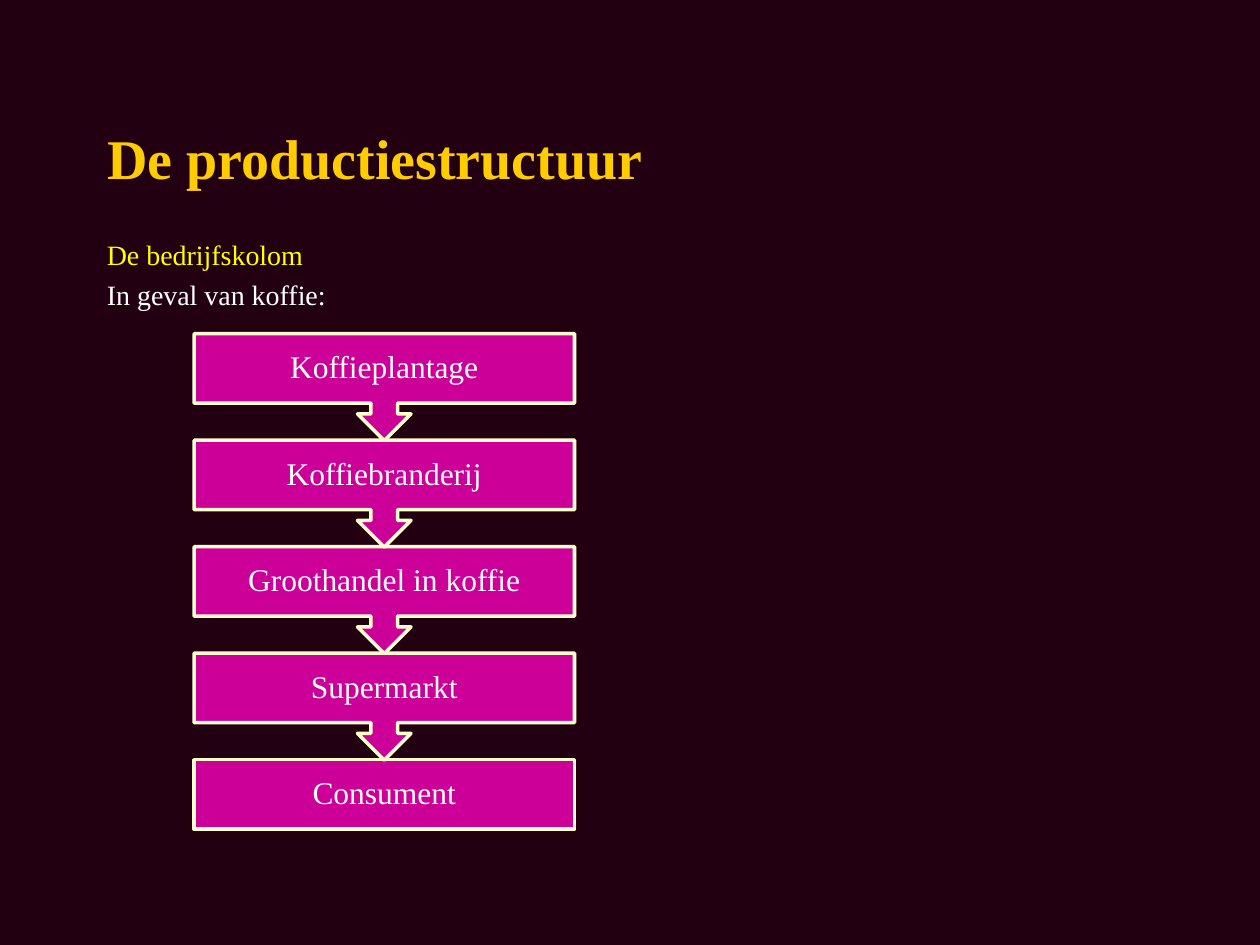
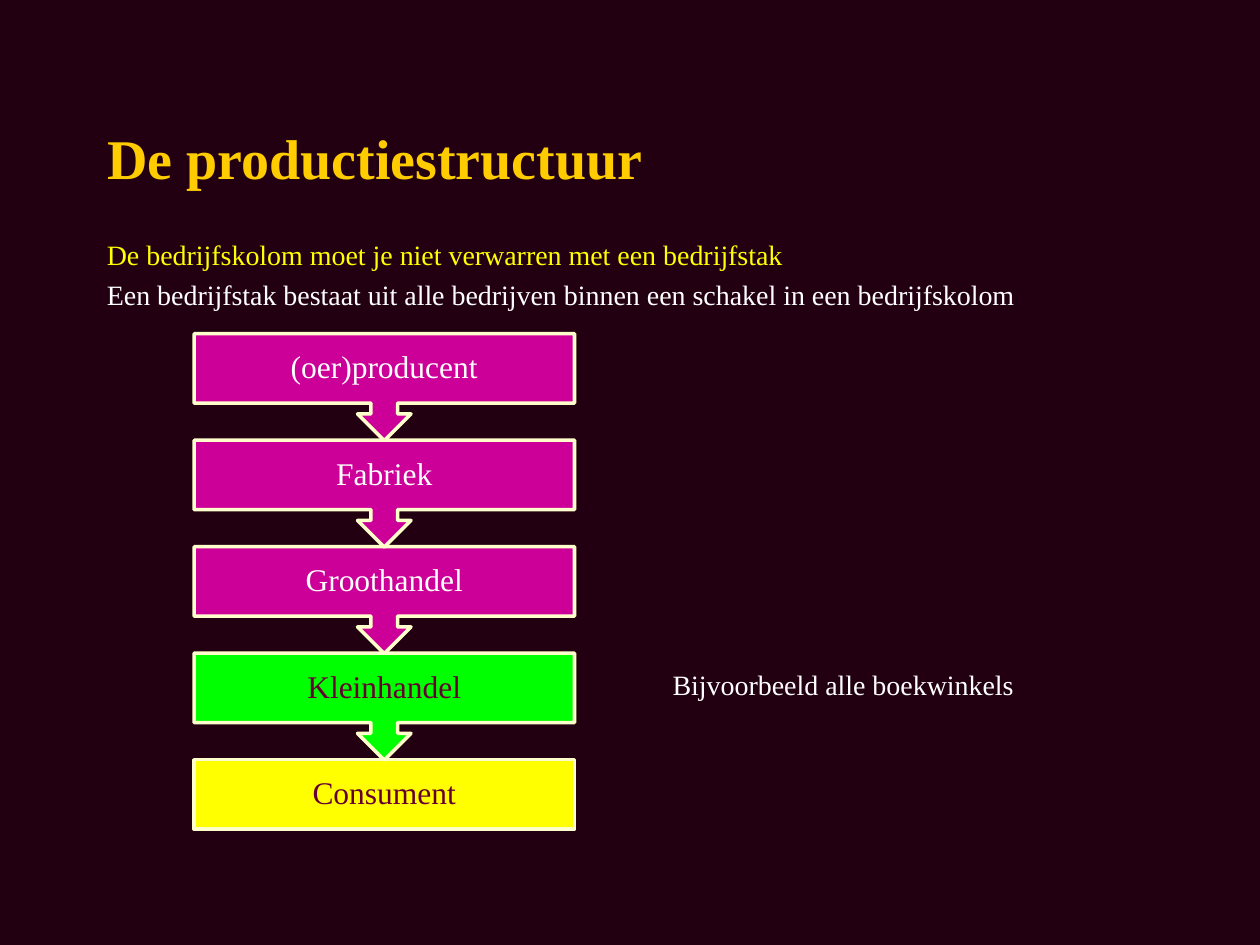
from pptx import Presentation
from pptx.dml.color import RGBColor
from pptx.enum import shapes, text
from pptx.util import Pt

# Shared style
DARK = RGBColor(0x22, 0x00, 0x11)
GOLD = RGBColor(0xFF, 0xCC, 0x00)
YELLOW = RGBColor(0xFF, 0xFF, 0x00)
WHITE = RGBColor(0xFF, 0xFF, 0xFF)
CREAM = RGBColor(0xFF, 0xFF, 0xCC)
PINK = RGBColor(0xCC, 0x00, 0x99)
GREEN = RGBColor(0x00, 0xFF, 0x00)
WINE = RGBColor(0x66, 0x00, 0x33)
FONT = "Times New Roman"

# Chain of boxes, in points
LEFT, TOP, WIDTH = 110.9, 190.7, 217.4
BOX, STEP, CALL = 39.7, 60.85, 61.1


class Deck:
    def __init__(self):
        self.prs = Presentation()
        self.prs.slide_width, self.prs.slide_height = Pt(720), Pt(540)
        fill = self.prs.slide_master.background.fill
        fill.solid()
        fill.fore_color.rgb = DARK

    def style(self, para, size, color, bold=False):
        for run in para.runs:
            font = run.font
            font.name, font.size, font.bold = FONT, Pt(size), bold
            font.color.rgb = color

    def slide(self, title):
        self.page = self.prs.slides.add_slide(self.prs.slide_layouts[5])
        head = self.page.shapes.title
        head.left, head.top = Pt(54), Pt(60)
        head.width, head.height = Pt(612), Pt(60)
        frame = head.text_frame
        frame.text = title
        frame.auto_size = text.MSO_AUTO_SIZE.NONE
        frame.vertical_anchor = text.MSO_ANCHOR.MIDDLE
        para = frame.paragraphs[0]
        para.alignment = text.PP_ALIGN.LEFT
        self.style(para, 32, GOLD, True)

    def note(self, left, top, width, height, lines):
        """Text box with one (wording, colour) pair per paragraph."""
        box = self.page.shapes.add_textbox(Pt(left), Pt(top), Pt(width), Pt(height))
        frame = box.text_frame
        frame.word_wrap = True
        frame.text = "\n".join(words for words, _ in lines)
        for i, (para, (_, color)) in enumerate(zip(frame.paragraphs, lines)):
            para.space_before = Pt(3.8 if i else 0)
            self.style(para, 16, color)

    def link(self, row, words, last, fill, ink):
        """One step of the chain; all but the last point to the next."""
        kinds = shapes.MSO_SHAPE
        kind = kinds.RECTANGLE if last else kinds.DOWN_ARROW_CALLOUT
        high = BOX if last else CALL
        box = self.page.shapes.add_shape(
            kind, Pt(LEFT), Pt(TOP + row * STEP), Pt(WIDTH), Pt(high))
        if not last:
            box.adjustments[3] = BOX / CALL
        box.shadow.inherit = False
        box.fill.solid()
        box.fill.fore_color.rgb = fill
        box.line.color.rgb = CREAM
        box.line.width = Pt(2)
        frame = box.text_frame
        frame.word_wrap = True
        frame.vertical_anchor = text.MSO_ANCHOR.MIDDLE
        frame.margin_left = frame.margin_right = Pt(10)
        frame.margin_top = frame.margin_bottom = Pt(5)
        frame.text = words
        para = frame.paragraphs[0]
        para.alignment = text.PP_ALIGN.CENTER
        para.line_spacing = 0.9
        self.style(para, 18, ink)

    def chain(self, steps, marks):
        """Draw from the bottom up, so each arrow tip lies on the next box."""
        end = len(steps) - 1
        for row in range(end, -1, -1):
            fill, ink = marks.get(row, (PINK, WHITE))
            self.link(row, steps[row], row == end, fill, ink)


def topic(deck, lead, body, steps, marks):
    deck.slide("De productiestructuur")
    deck.note(54, 132, 606, 54, [(lead, YELLOW), (body, WHITE)])
    deck.chain(steps, marks)


def main():
    deck = Deck()

    # Coffee chain
    topic(deck, "De bedrijfskolom", "In geval van koffie:",
          ["Koffieplantage", "Koffiebranderij", "Groothandel in koffie",
           "Supermarkt", "Consument"], {})

    # Chain against branch
    topic(deck, "De bedrijfskolom moet je niet verwarren met een bedrijfstak",
          "Een bedrijfstak bestaat uit alle bedrijven binnen een schakel in een bedrijfskolom",
          ["(oer)producent", "Fabriek", "Groothandel", "Kleinhandel", "Consument"],
          {3: (GREEN, WINE), 4: (YELLOW, WINE)})
    deck.note(377.3, 378, 240, 28, [("Bijvoorbeeld alle boekwinkels", WHITE)])

    deck.prs.save("out.pptx")


if __name__ == "__main__":
    main()
